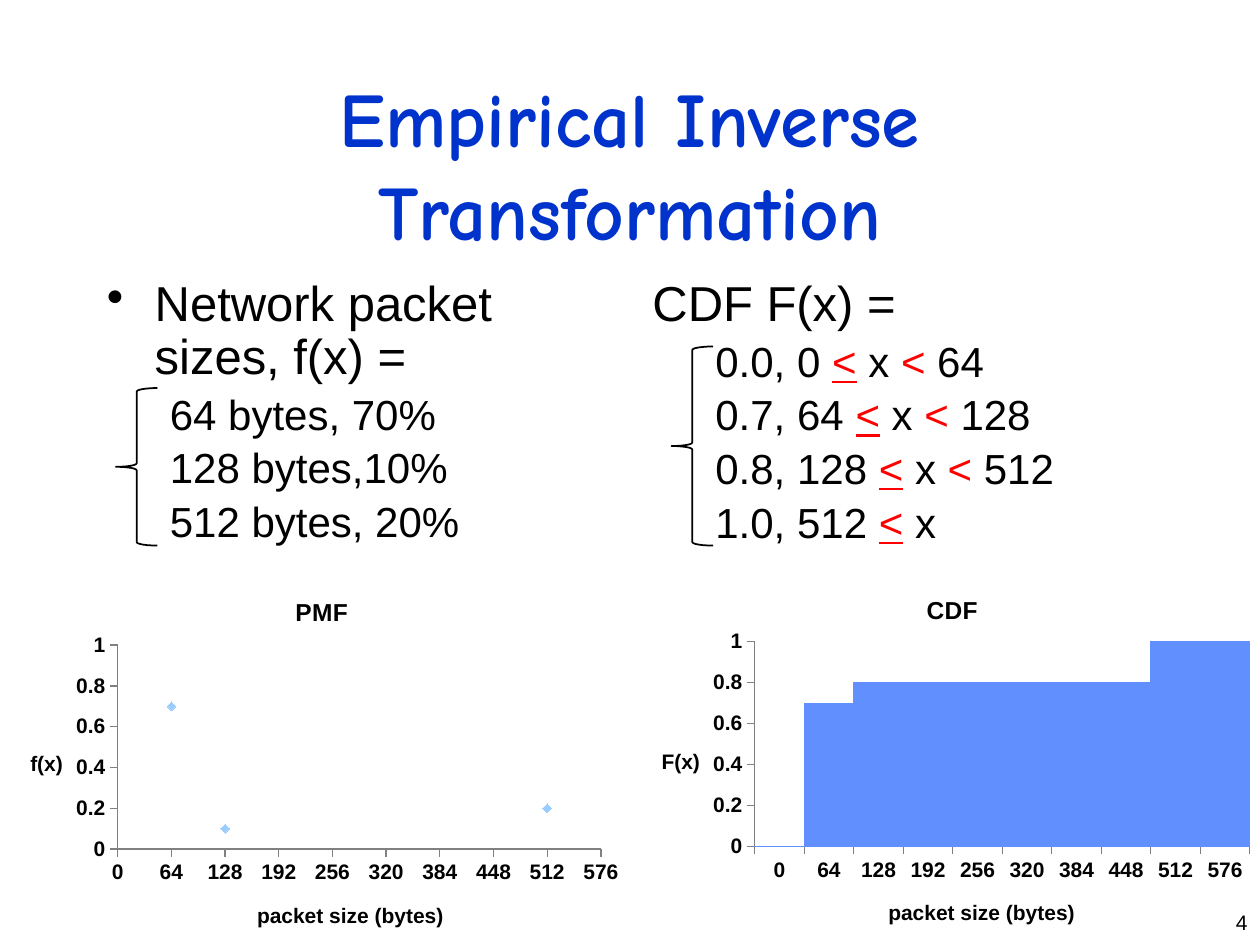
import pptx
import pptx.chart.data
import pptx.dml.color
import pptx.enum.chart
import pptx.enum.shapes
import pptx.enum.text
import pptx.oxml
import pptx.oxml.ns
import pptx.util
from pptx.util import Inches, Pt

THEME = {
    "font": "Arial", "title_font": "Comic Neue",
    "title": "0033CC", "text": "000000", "accent": "FF0000",
    "bar": "618FFD", "marker": "99CCFF", "axis": "808080",
    "title_size": 44, "body_size": 28, "sub_size": 24,
    "chart_title_size": 14, "small_size": 12,
}
AT_LEAST, BELOW = ("<", True), ("<", False)  # red signs: (text, underlined)

TITLE = "Empirical Inverse Transformation"
PAGE_NUMBER = "4"
COLUMNS = [
    {"left": 0.75, "head": "Network packet sizes, f(x) =", "bullet": True,
     "brace": (0.92, 3.08, 0.33, 1.25),
     "lines": [["64 bytes, 70%"], ["128 bytes,10%"], ["512 bytes, 20%"]]},
    {"left": 5.08, "head": "CDF F(x) =", "bullet": False,
     "brace": (5.33, 2.75, 0.33, 1.58),
     "lines": [["0.0, 0 ", AT_LEAST, " x ", BELOW, " 64"],
               ["0.7, 64 ", AT_LEAST, " x ", BELOW, " 128"],
               ["0.8, 128 ", AT_LEAST, " x ", BELOW, " 512"],
               ["1.0, 512 ", AT_LEAST, " x"]]},
]
PMF = [(64, 0.7), (128, 0.1), (512, 0.2)]
SIZES = range(0, 577, 64)
CDF = [0, 0.7] + [0.8] * 6 + [1, 1]
X_TITLE = "packet size (bytes)"


def color(name):
    return pptx.dml.color.RGBColor.from_string(THEME[name])


def style_font(font, size, fill="text", face="font", bold=False):
    font.name, font.size, font.bold = THEME[face], Pt(THEME[size]), bold
    font.color.rgb = color(fill)


def add_box(page, *bounds):
    frame = page.shapes.add_textbox(*map(Inches, bounds)).text_frame
    frame.word_wrap = True
    return frame


def format_para(para, size, margin, indent, bullet=False):
    para.line_spacing = 0.9
    para.space_before = Pt(0.2 * THEME[size])
    props = para._p.get_or_add_pPr()
    props.set("marL", str(Inches(margin)))
    props.set("indent", str(Inches(indent)))
    mark = pptx.oxml.ns.qn("a:buChar" if bullet else "a:buNone")
    element = props.makeelement(mark, {"char": "•"} if bullet else {})
    props.append(element)


def add_column(page, column):
    frame = add_box(page, column["left"], 2.17, 4.17, 4.5)
    head = frame.paragraphs[0]
    head.text = column["head"]
    format_para(head, "body_size", 0.38, -0.38, column["bullet"])
    style_font(head.runs[0].font, "body_size")
    for line in column["lines"]:
        para = frame.add_paragraph()
        para.level = 1
        format_para(para, "sub_size", 0.81, -0.31)
        for piece in line:
            is_sign = isinstance(piece, tuple)
            text, underlined = piece if is_sign else (piece, False)
            span = para.add_run()
            span.text = text
            style_font(span.font, "sub_size", "accent" if is_sign else "text")
            span.font.underline = underlined
    brace = page.shapes.add_shape(
        pptx.enum.shapes.MSO_SHAPE.LEFT_BRACE, *map(Inches, column["brace"]))
    brace.shadow.inherit = False
    brace.fill.background()
    brace.line.color.rgb = color("text")
    brace.line.width = Pt(1)


def set_layout(parent, index, inner=False, **values):
    """Place a chart part by fractions of the chart area."""
    for old in parent.findall(pptx.oxml.ns.qn("c:layout")):
        parent.remove(old)
    target = '<c:layoutTarget val="inner"/>' if inner else ""
    modes = "".join(f'<c:{key}Mode val="edge"/>' for key in "xy")
    places = "".join(f'<c:{key} val="{value}"/>' for key, value in values.items())
    parent.insert(index, pptx.oxml.parse_xml(
        f'<c:layout {pptx.oxml.ns.nsdecls("c")}><c:manualLayout>'
        f"{target}{modes}{places}</c:manualLayout></c:layout>"))


def set_title(owner, text, size, x, y):
    owner.has_title = True
    title = owner.chart_title if hasattr(owner, "chart_title") else owner.axis_title
    title.text_frame.text = text
    style_font(title.text_frame.paragraphs[0].runs[0].font, size, bold=True)
    title.text_frame._txBody.bodyPr.set("rot", "0")
    set_layout(title._element, 1, x=x, y=y)


def add_chart(page, kind, data, left, top, title, y_title, plot):
    chart = page.shapes.add_chart(
        kind, *map(Inches, (left, top, 5, 3)), data).chart
    style_font(chart.font, "small_size", bold=True)
    chart.has_legend = False
    set_title(chart, title, "chart_title_size", 0.46, 0.06)
    set_title(chart.category_axis, X_TITLE, "small_size", 0.4, 0.87)
    set_title(chart.value_axis, y_title, "small_size", 0.04, 0.47)
    for axis in (chart.category_axis, chart.value_axis):
        axis.has_major_gridlines = False
        axis.major_tick_mark = pptx.enum.chart.XL_TICK_MARK.OUTSIDE
        axis.minor_tick_mark = pptx.enum.chart.XL_TICK_MARK.NONE
        axis.format.line.color.rgb = color("axis")
    values = chart.value_axis
    values.minimum_scale, values.maximum_scale, values.major_unit = 0, 1, 0.2
    values.tick_labels.number_format = "General"
    values.tick_labels.number_format_is_linked = False
    plot_area = chart._chartSpace.chart.plotArea
    set_layout(plot_area, 0, inner=True, **dict(zip("xywh", plot)))
    chart.plots[0].vary_by_categories = False
    return chart


def add_pmf(page):
    data = pptx.chart.data.XyChartData()
    points = data.add_series("Series 1")
    for point in PMF:
        points.add_data_point(*point)
    chart = add_chart(page, pptx.enum.chart.XL_CHART_TYPE.XY_SCATTER, data,
                      0.01, 4.52, "PMF", "f(x)", (0.185, 0.2, 0.767, 0.54))
    axis = chart.category_axis
    axis.minimum_scale, axis.maximum_scale, axis.major_unit = 0, SIZES[-1], 64
    series = chart.plots[0].series[0]
    series.smooth = False
    series.format.line.fill.background()
    series.marker.style = pptx.enum.chart.XL_MARKER_STYLE.DIAMOND
    series.marker.size = 5
    series.marker.format.fill.solid()
    series.marker.format.fill.fore_color.rgb = color("marker")
    series.marker.format.line.color.rgb = color("marker")


def add_cdf(page):
    data = pptx.chart.data.CategoryChartData()
    data.categories = [str(size) for size in SIZES]
    data.add_series("Series 1", CDF)
    chart = add_chart(page, pptx.enum.chart.XL_CHART_TYPE.COLUMN_CLUSTERED, data,
                      5.02, 4.5, "CDF", "F(x)", (0.194, 0.198, 0.786, 0.542))
    chart.plots[0].gap_width = 0
    series = chart.plots[0].series[0]
    series.format.fill.solid()
    series.format.fill.fore_color.rgb = color("bar")
    series.format.line.color.rgb = color("bar")
    series.format.line.width = Pt(0.75)


def main():
    deck = pptx.Presentation()
    deck.slide_width, deck.slide_height = Inches(10), Inches(7.5)
    page = deck.slides.add_slide(deck.slide_layouts[6])

    heading = add_box(page, 0.75, 0.67, 8.5, 1.25)
    heading.vertical_anchor = pptx.enum.text.MSO_ANCHOR.MIDDLE
    heading.text = TITLE
    heading.paragraphs[0].alignment = pptx.enum.text.PP_ALIGN.CENTER
    style_font(heading.paragraphs[0].runs[0].font, "title_size", "title",
               "title_font", bold=True)

    for column in COLUMNS:
        add_column(page, column)

    number = add_box(page, 9.25, 7.17, 0.75, 0.33)
    number.text = PAGE_NUMBER
    number.paragraphs[0].alignment = pptx.enum.text.PP_ALIGN.RIGHT
    style_font(number.paragraphs[0].runs[0].font, "small_size")

    add_pmf(page)
    add_cdf(page)
    deck.save("out.pptx")


if __name__ == "__main__":
    main()
